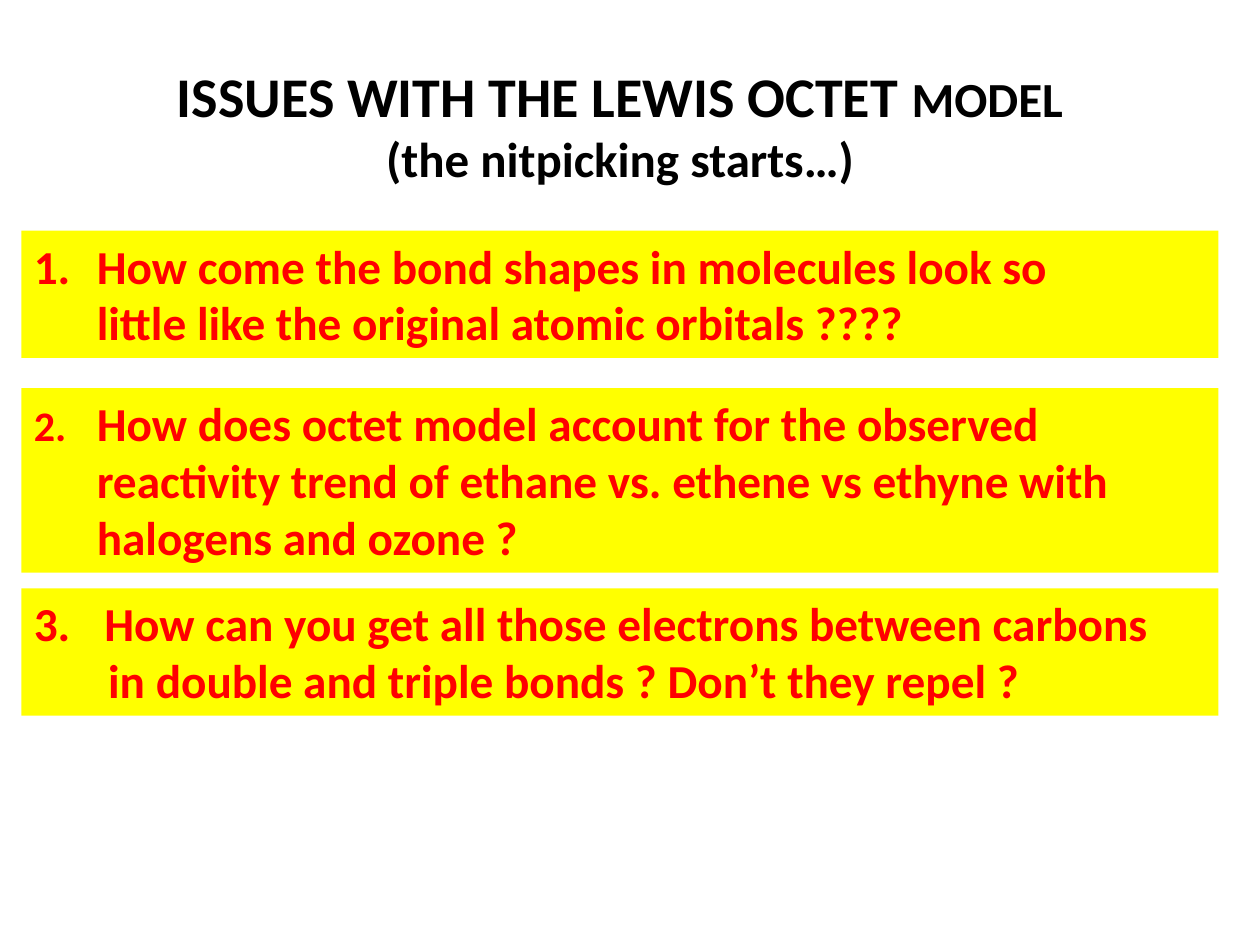
from lxml.etree import SubElement
from pptx import Presentation
from pptx.dml.color import RGBColor
from pptx.enum.shapes import MSO_SHAPE
from pptx.enum.text import MSO_ANCHOR, MSO_AUTO_SIZE, PP_ALIGN
from pptx.oxml.ns import qn
from pptx.util import Inches, Pt

BLACK = RGBColor(0x00, 0x00, 0x00)
RED = RGBColor(0xFF, 0x00, 0x00)
YELLOW = RGBColor(0xFF, 0xFF, 0x00)

WIDTH, HEIGHT = 10, 7.5
LEFT, BOX_WIDTH = 0.17, 9.5
LINE_HEIGHT, PADDING = 0.455, 0.1

# Each question: top, lines shown, paragraphs.
# Each paragraph: runs of (text, size), left indent, first-line indent, list number.
QUESTIONS = [
    (1.83, 2, [
        ([("How come the bond shapes in molecules look so", 27)], 0.5, -0.5, 1),
        ([("little like the original atomic orbitals ????", 27)], 0.5, 0, None),
    ]),
    (3.08, 3, [
        ([("2.\t", 24),
          ("How does octet model account for the observed reactivity trend "
           "of ethane vs. ethene vs ethyne with halogens and ozone ?", 27)],
         0.5, -0.5, None),
    ]),
    (4.67, 2, [
        ([("How can you get all those electrons between carbons", 27)], 0.56, -0.56, 3),
        ([("in double and triple bonds ? Don’t they repel ?", 27)], 0.59, 0, None),
    ]),
]


def add_text(p, text, size=27, color=BLACK, bold=True, font="Calibri"):
    r = p.add_run()
    r.text = text
    r.font.name = font
    r.font.size = Pt(size)
    r.font.bold = bold
    r.font.color.rgb = color


def format_indent(p, left, first, number=None):
    """Set the indents in inches and, if given, the automatic list number."""
    pPr = p._p.get_or_add_pPr()
    pPr.set("marL", str(Inches(left)))
    pPr.set("indent", str(Inches(first)))
    if number:
        SubElement(pPr, qn("a:buFont"), typeface="+mj-lt")
        SubElement(pPr, qn("a:buAutoNum"), type="arabicPeriod", startAt=str(number))


def next_paragraph(tf, index):
    return tf.add_paragraph() if index else tf.paragraphs[0]


def fill_title(title, left, top, width, height):
    title.left, title.top, title.width, title.height = map(
        Inches, (left, top, width, height))
    tf = title.text_frame
    tf.word_wrap = True
    tf.auto_size = MSO_AUTO_SIZE.NONE
    tf.vertical_anchor = MSO_ANCHOR.TOP
    lines = [
        [("ISSUES WITH THE LEWIS OCTET ", 32), ("MODEL", 28)],
        [("(the nitpicking starts…)", 28)],
    ]
    for i, runs in enumerate(lines):
        p = next_paragraph(tf, i)
        p.alignment = PP_ALIGN.CENTER
        for text, size in runs:
            add_text(p, text, size=size)


def add_question(slide, left, top, width, height, paragraphs):
    sp = slide.shapes.add_shape(
        MSO_SHAPE.RECTANGLE, *map(Inches, (left, top, width, height)))
    sp.shadow.inherit = False
    sp.fill.solid()
    sp.fill.fore_color.rgb = YELLOW
    sp.line.fill.background()
    tf = sp.text_frame
    tf.word_wrap = True
    tf.auto_size = MSO_AUTO_SIZE.SHAPE_TO_FIT_TEXT
    tf.vertical_anchor = MSO_ANCHOR.TOP
    for i, (runs, indent, first, number) in enumerate(paragraphs):
        p = next_paragraph(tf, i)
        p.alignment = PP_ALIGN.LEFT
        format_indent(p, indent, first, number)
        for text, size in runs:
            add_text(p, text, size=size, color=RED)


def main():
    prs = Presentation()
    prs.slide_width, prs.slide_height = Inches(WIDTH), Inches(HEIGHT)
    slide = prs.slides.add_slide(prs.slide_layouts[5])
    fill_title(slide.shapes.title, 0.42, 0.44, 9, 1.12)
    for top, lines, paragraphs in QUESTIONS:
        height = PADDING + lines * LINE_HEIGHT
        add_question(slide, LEFT, top, BOX_WIDTH, height, paragraphs)
    prs.save("out.pptx")


if __name__ == "__main__":
    main()
